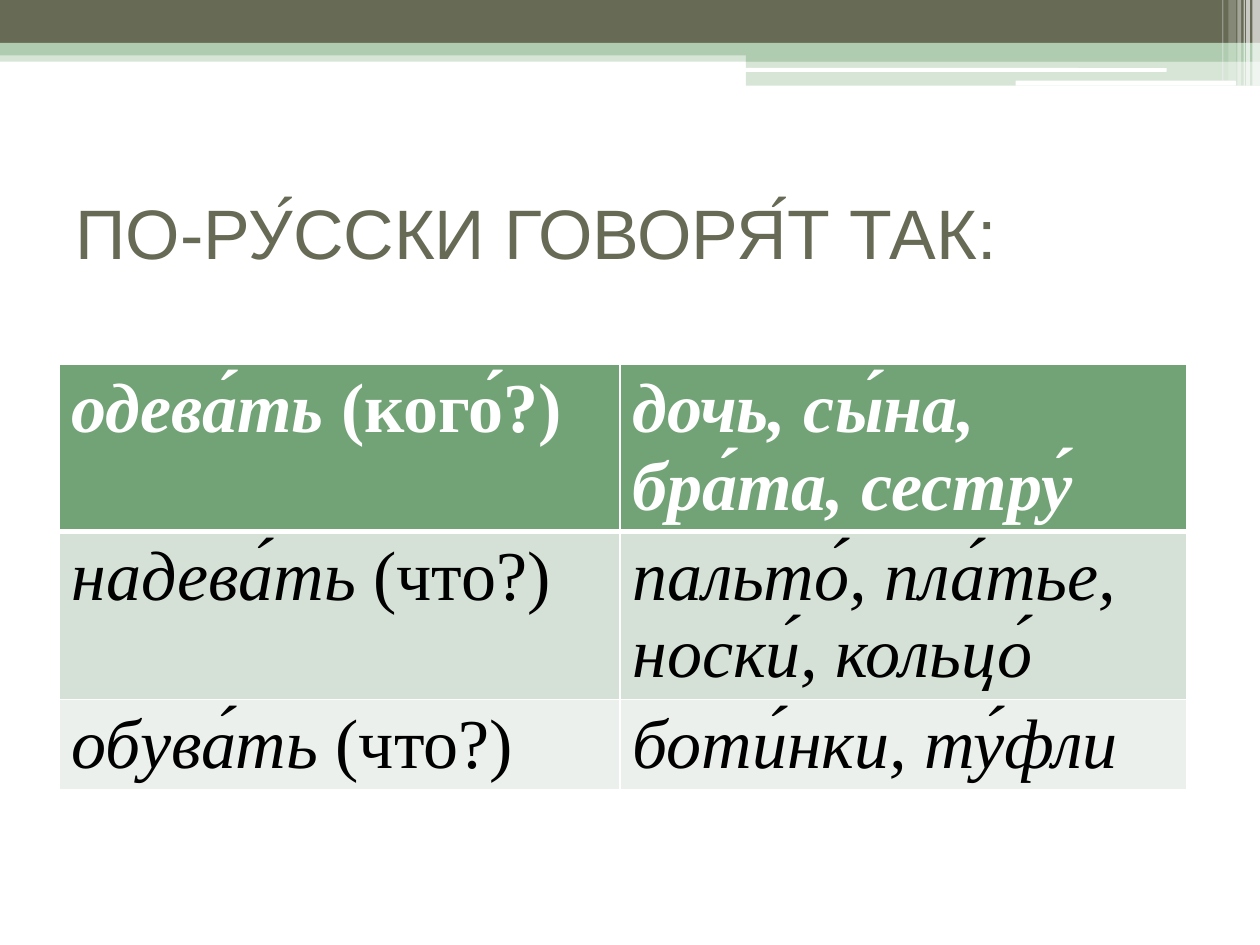
"""Build a Russian vocabulary slide with a title and a table of verbs and objects."""
from lxml.etree import SubElement
from pptx import Presentation
from pptx.dml.color import RGBColor
from pptx.enum.shapes import MSO_SHAPE as SHAPE
from pptx.enum.text import MSO_ANCHOR, MSO_AUTO_SIZE, PP_ALIGN
from pptx.oxml.ns import qn
from pptx.util import Inches, Pt


def paint(fill, color, opacity=100):
    fill.solid()
    fill.fore_color.rgb = RGBColor.from_string(color)
    if opacity < 100:
        tint = fill._xPr.find(qn("a:solidFill"))[0]
        SubElement(tint, qn("a:alpha"), val=str(opacity * 1000))


def add_border(cell, side, points):
    line = SubElement(cell._tc.get_or_add_tcPr(), qn(f"a:{side}"), w=str(Pt(points)))
    SubElement(SubElement(line, qn("a:solidFill")), qn("a:srgbClr"), val=WHITE)


WHITE, OLIVE, MINT, GREEN = "FFFFFF", "676A55", "B0CCB0", "72A376"

prs = Presentation()
prs.slide_width, prs.slide_height = Inches(10), Inches(7.5)
slide = prs.slides.add_slide(prs.slide_layouts[5])

bands = [
    (SHAPE.RECTANGLE, 0, 0.4, 10, 0.09, MINT, 50),
    (SHAPE.RECTANGLE, 0, 0, 10, 0.34, OLIVE, 100),
    (SHAPE.RECTANGLE, 0, 0.34, 10, 0.1, MINT, 100),
    (SHAPE.RECTANGLE, 5.92, 0.39, 4.08, 0.1, MINT, 100),
    (SHAPE.RECTANGLE, 5.92, 0.48, 4.08, 0.2, MINT, 50),
    (SHAPE.ROUNDED_RECTANGLE, 5.91, 0.54, 3.35, 0.03, WHITE, 100),
    (SHAPE.ROUNDED_RECTANGLE, 8.06, 0.64, 1.75, 0.04, WHITE, 100),
]
stripes = [
    (9.94, 0.06, 0.68, 65),
    (9.89, 0.03, 0.68, 65),
    (9.87, 0.01, 0.68, 60),
    (9.82, 0.03, 0.68, 40),
    (9.75, 0.06, 0.64, 20),
    (9.7, 0.01, 0.64, 30),
]
bands += [(SHAPE.RECTANGLE, left, 0, width, height, WHITE, opacity)
          for left, width, height, opacity in stripes]
for preset, left, top, width, height, color, opacity in bands:
    band = slide.shapes.add_shape(
        preset, Inches(left), Inches(top), Inches(width), Inches(height))
    band.shadow.inherit = False
    band.line.fill.background()
    paint(band.fill, color, opacity)

title = slide.shapes.title
title.left, title.top = Inches(0.5), Inches(1.25)
title.width, title.height = Inches(9), Inches(1.17)
title.text_frame.auto_size = MSO_AUTO_SIZE.NONE
title.text_frame.vertical_anchor = MSO_ANCHOR.MIDDLE
heading = title.text_frame.paragraphs[0]
heading.alignment = PP_ALIGN.LEFT
for piece in ["ПО-РУ", "́", "ССКИ ГОВОРЯ", "́", "Т ТАК:"]:
    run = heading.add_run()
    run.text = piece
    run.font.name = "Times New Roman" if piece == "́" else "Arial"
heading.font.size = Pt(40)
paint(heading.font.fill, OLIVE)

phrases = [
    ("одева́ть", " (кого́?)", "дочь, сы́на, бра́та, сестру́"),
    ("надева́ть", " (что?)", "пальто́, пла́тье, носки́, кольцо́"),
    ("обува́ть", " (что?)", "боти́нки, ту́фли"),
]
row_fills = [GREEN, "D5E0D6", "EBF0EC"]
row_heights = [1.33, 1.33, 0.71]
verbs = slide.shapes.add_table(
    3, 2, Inches(0.47), Inches(2.89), Inches(8.95), Inches(sum(row_heights))).table
for column, width in zip(verbs.columns, [4.45, 4.5]):
    column.width = Inches(width)

for r, (verb, question, objects) in enumerate(phrases):
    verbs.rows[r].height = Inches(row_heights[r])
    for c, pieces in enumerate([[(verb, True), (question, False)], [(objects, True)]]):
        cell = verbs.cell(r, c)
        for side, points in [("lnL", 1), ("lnR", 1),
                             ("lnT", 3 if r == 1 else 1), ("lnB", 3 if r == 0 else 1)]:
            add_border(cell, side, points)
        paint(cell.fill, row_fills[r])
        phrase = cell.text_frame.paragraphs[0]
        for words, italic in pieces:
            run = phrase.add_run()
            run.text = words
            run.font.italic = italic
        phrase.font.name = "Times New Roman"
        phrase.font.size = Pt(40)
        phrase.font.bold = r == 0
        paint(phrase.font.fill, WHITE if r == 0 else "000000")

prs.save("out.pptx")
